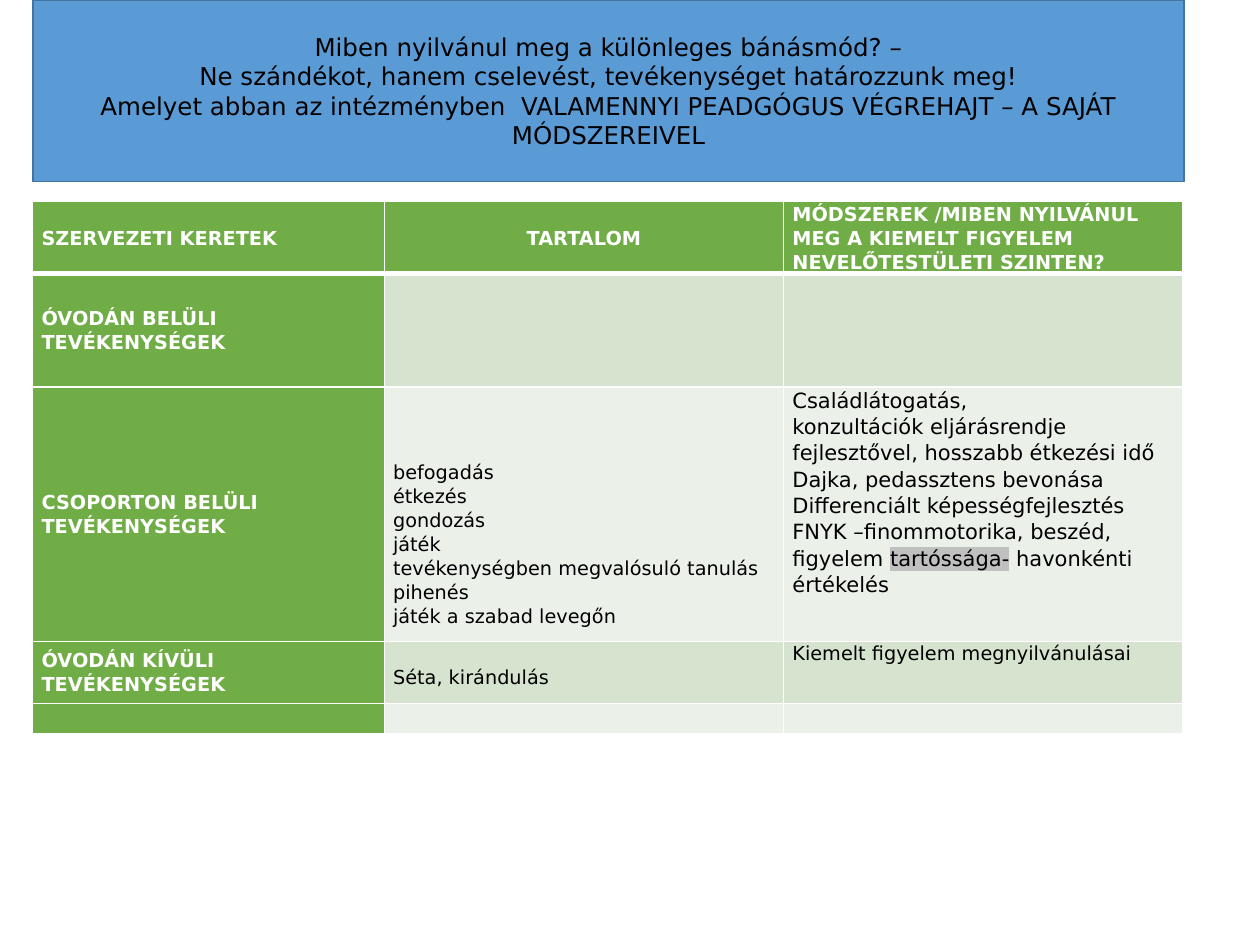
from lxml import etree
from pptx import Presentation
from pptx.dml.color import RGBColor
from pptx.enum.text import MSO_ANCHOR, MSO_AUTO_SIZE, PP_ALIGN
from pptx.oxml.ns import qn
from pptx.util import Inches, Pt

# Content
BANNER = [
    "Miben nyilvánul meg a különleges bánásmód? –",
    "Ne szándékot, hanem cselevést, tevékenységet határozzunk meg!",
    "Amelyet abban az intézményben  VALAMENNYI PEADGÓGUS VÉGREHAJT – A SAJÁT MÓDSZEREIVEL",
]
HIGHLIGHTED = "tartóssága-"
ROWS = [
    [["SZERVEZETI KERETEK"], ["TARTALOM"],
     ["MÓDSZEREK /MIBEN NYILVÁNUL MEG A KIEMELT FIGYELEM NEVELŐTESTÜLETI SZINTEN?"]],
    [["ÓVODÁN BELÜLI TEVÉKENYSÉGEK"], [], []],
    [["CSOPORTON BELÜLI TEVÉKENYSÉGEK"],
     ["befogadás", "étkezés", "gondozás", "játék",
      "tevékenységben megvalósuló tanulás", "pihenés", "játék a szabad levegőn"],
     ["Családlátogatás,",
      "konzultációk eljárásrendje fejlesztővel, hosszabb étkezési idő",
      "Dajka, pedassztens bevonása",
      "Differenciált képességfejlesztés",
      "FNYK –finommotorika, beszéd, figyelem tartóssága- havonkénti értékelés"]],
    [["ÓVODÁN KÍVÜLI TEVÉKENYSÉGEK"], ["Séta, kirándulás"],
     ["Kiemelt figyelem megnyilvánulásai"]],
    [[], [], []],
]

# Format
COLORS = {"banner": "5B9BD5", "banner_line": "43739E", "header": "70AD47",
          "band_dark": "D5E3CF", "band_light": "EBF1E9", "highlight": "C0C0C0",
          "light": "FFFFFF", "dark": "000000"}
FONT = "DejaVu Sans"
LEFT, WIDTH = 0.26, 9.14
COLUMN_WIDTHS = [2.79, 3.17, 3.17]
ROW_HEIGHTS = [0.52, 0.9, 2.02, 0.49, 0.24]
TOP_MARGINS = {(2, 1): 0.58, (3, 1): 0.19}
TEXT_SIZES = {(2, 2): 12}


def rgb(name):
    return RGBColor.from_string(COLORS[name])


def add_run(paragraph, text, color, **font_format):
    run = paragraph.add_run()
    run.text = text
    for attribute, value in {"name": FONT, **font_format}.items():
        setattr(run.font, attribute, value)
    run.font.color.rgb = rgb(color)
    return run


def highlight(run):
    mark = etree.Element(qn("a:highlight"))
    etree.SubElement(mark, qn("a:srgbClr"), val=COLORS["highlight"])
    run.font._element.find(qn("a:solidFill")).addnext(mark)


def add_borders(cell, row):
    widths = {"L": 1, "R": 1, "T": 3 if row == 1 else 1, "B": 3 if row == 0 else 1}
    properties = cell._tc.get_or_add_tcPr()
    for position, (side, width) in enumerate(widths.items()):
        border = etree.Element(qn(f"a:ln{side}"), w=str(Pt(width)))
        fill = etree.SubElement(border, qn("a:solidFill"))
        etree.SubElement(fill, qn("a:srgbClr"), val=COLORS["light"])
        properties.insert(position, border)


def fill_cell(cell, row, column, lines):
    is_heading = row == 0 or column == 0
    band = "band_dark" if row % 2 else "band_light"
    cell.fill.solid()
    cell.fill.fore_color.rgb = rgb("header" if is_heading else band)
    add_borders(cell, row)
    cell_format = {
        "margin_left": Inches(0.07), "margin_right": Inches(0.07),
        "margin_top": Inches(TOP_MARGINS.get((row, column), 0)), "margin_bottom": 0,
        "vertical_anchor": MSO_ANCHOR.MIDDLE if is_heading else MSO_ANCHOR.TOP,
    }
    for attribute, value in cell_format.items():
        setattr(cell, attribute, value)

    frame = cell.text_frame
    if not lines:  # keeps an empty row low
        etree.SubElement(frame.paragraphs[0]._p, qn("a:endParaRPr"), sz="1100")
    for index, line in enumerate(lines):
        paragraph = frame.add_paragraph() if index else frame.paragraphs[0]
        paragraph.line_spacing = 1.07
        paragraph.alignment = PP_ALIGN.CENTER if (row, column) == (0, 1) else PP_ALIGN.LEFT
        for part in line.partition(HIGHLIGHTED):
            if part:
                run = add_run(paragraph, part, "light" if is_heading else "dark",
                              size=Pt(TEXT_SIZES.get((row, column), 11)), bold=is_heading)
                if part == HIGHLIGHTED:
                    highlight(run)


presentation = Presentation()
presentation.slide_width, presentation.slide_height = Inches(10), Inches(7.5)
slide = presentation.slides.add_slide(presentation.slide_layouts[5])

# Title banner
banner = slide.shapes.title
banner_box = {"left": LEFT, "top": 0, "width": WIDTH, "height": 1.44}
for attribute, value in banner_box.items():
    setattr(banner, attribute, Inches(value))
banner.fill.solid()
banner.fill.fore_color.rgb = rgb("banner")
banner.line.color.rgb = rgb("banner_line")
banner.line.width = Pt(1)
banner_frame = banner.text_frame
frame_format = {"word_wrap": True, "auto_size": MSO_AUTO_SIZE.NONE,
                "vertical_anchor": MSO_ANCHOR.MIDDLE}
for attribute, value in frame_format.items():
    setattr(banner_frame, attribute, value)
for index, line in enumerate(BANNER):
    paragraph = banner_frame.add_paragraph() if index else banner_frame.paragraphs[0]
    paragraph.alignment = PP_ALIGN.CENTER
    add_run(paragraph, line, "dark", size=Pt(14))

# Table of activities
activities = slide.shapes.add_table(
    len(ROWS), len(COLUMN_WIDTHS), Inches(LEFT), Inches(1.6),
    Inches(WIDTH), Inches(sum(ROW_HEIGHTS))).table
for column, width in zip(activities.columns, COLUMN_WIDTHS):
    column.width = Inches(width)
for row, height in zip(activities.rows, ROW_HEIGHTS):
    row.height = Inches(height)
for row, cells in enumerate(ROWS):
    for column, lines in enumerate(cells):
        fill_cell(activities.cell(row, column), row, column, lines)

presentation.save("out.pptx")
